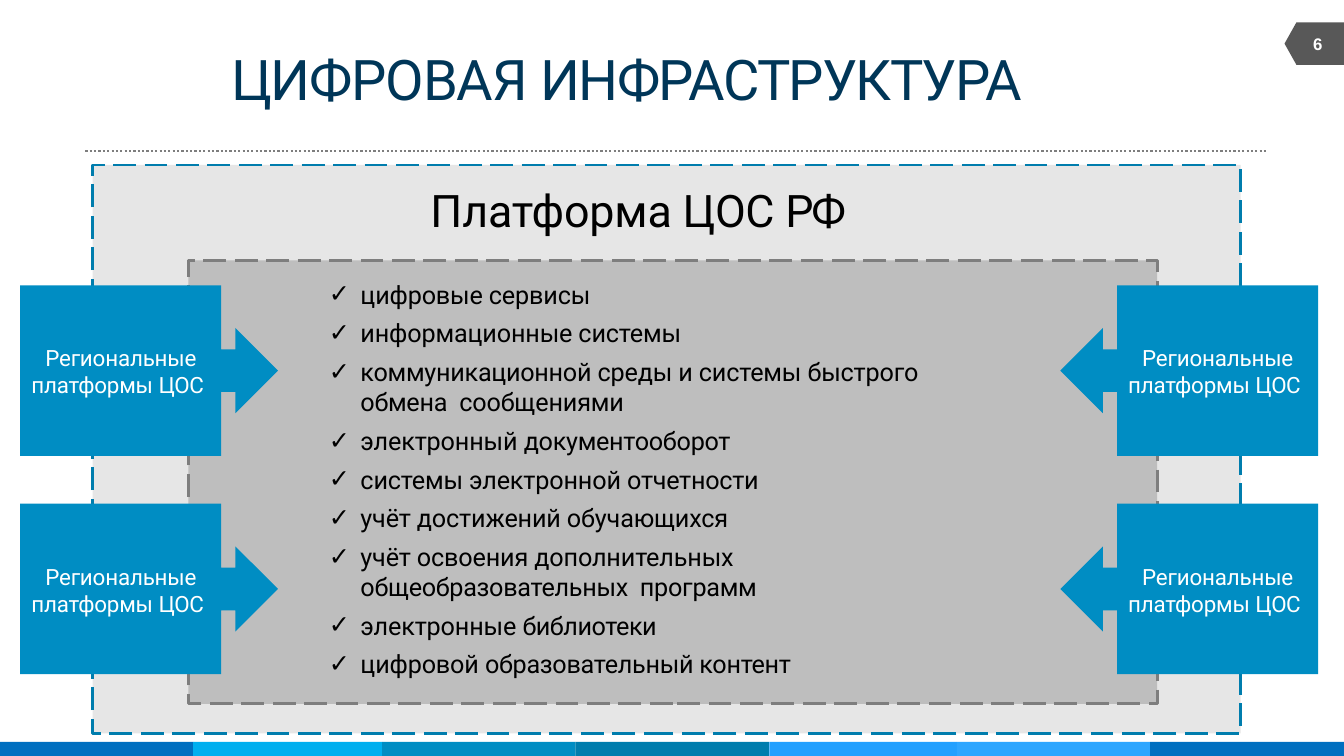
"""Build the slide about digital infrastructure and its regional platforms."""
from lxml.etree import SubElement
from pptx import Presentation
from pptx.dml.color import RGBColor
from pptx.enum.dml import MSO_LINE
from pptx.enum.shapes import MSO_CONNECTOR, MSO_SHAPE
from pptx.enum.text import MSO_ANCHOR, MSO_AUTO_SIZE, PP_ALIGN
from pptx.oxml.ns import qn
from pptx.util import Pt

WHITE = RGBColor(0xFF, 0xFF, 0xFF)
BLACK = RGBColor(0x00, 0x00, 0x00)
NAVY = RGBColor(0x00, 0x36, 0x58)
BLUE = RGBColor(0x00, 0x6F, 0xC0)
CYAN = RGBColor(0x00, 0xAF, 0xEF)
OCEAN = RGBColor(0x00, 0x8D, 0xC3)
TEAL = RGBColor(0x00, 0x7D, 0xAD)
SKY = RGBColor(0x22, 0xA0, 0xFF)
LIGHT_SKY = RGBColor(0x2E, 0xA6, 0xFF)
CHARCOAL = RGBColor(0x58, 0x58, 0x58)
GRAY = RGBColor(0x7E, 0x7E, 0x7E)
SILVER = RGBColor(0xBE, 0xBE, 0xBE)
PALE = RGBColor(0xE6, 0xE6, 0xE6)

deck = Presentation()
deck.slide_width, deck.slide_height = Pt(960), Pt(540)
page = deck.slides.add_slide(deck.slide_layouts[1])
title, services = page.placeholders


def add_block(kind, left, top, width, height, color):
    block = page.shapes.add_shape(kind, Pt(left), Pt(top), Pt(width), Pt(height))
    block.shadow.inherit = False
    block.fill.solid()
    block.fill.fore_color.rgb = color
    block.line.fill.background()
    return block


def write_text(box, para, pieces, size, color, before, top_inset=1, font="Roboto"):
    frame = box.text_frame
    frame.word_wrap = True
    frame.auto_size = MSO_AUTO_SIZE.NONE
    frame.vertical_anchor = MSO_ANCHOR.TOP
    frame.margin_left = frame.margin_right = frame.margin_bottom = 0
    frame.margin_top = Pt(top_inset)
    para.alignment = PP_ALIGN.LEFT
    para.space_before = Pt(before)
    for text, spacing in pieces:
        span = para.add_run()
        span.text = text
        span.font.name = font
        span.font.size = Pt(size)
        span.font.color.rgb = color
        span.font._element.set("spc", str(round(spacing * 100)))


stripe_edges = [0, 138, 273, 411, 549.5, 683.5, 821.5, 960]
stripe_colors = [BLUE, CYAN, OCEAN, TEAL, SKY, LIGHT_SKY, BLUE]
for left, right, color in zip(stripe_edges, stripe_edges[1:], stripe_colors):
    add_block(MSO_SHAPE.RECTANGLE, left, 530, right - left, 10, color)

badge = add_block(MSO_SHAPE.PENTAGON, 917.5, 16, 42.5, 30.3, CHARCOAL)
badge.rotation = 180
badge.adjustments[0] = 0.28
number = page.shapes.add_textbox(Pt(938), Pt(23), Pt(12), Pt(17))
number_para = number.text_frame.paragraphs[0]
write_text(number, number_para, [("6", -0.1)], 12, WHITE, 1, font="Arial")
number_para.runs[0].font.bold = True

title.left, title.top, title.width, title.height = Pt(165), Pt(30.5), Pt(604), Pt(50)
write_text(title, title.text_frame.paragraphs[0],
           [("ЦИФРОВАЯ ", -0.8), ("ИНФРАСТРУКТУРА", -1.2)], 40, NAVY, 0.9)

rule = page.shapes.add_connector(MSO_CONNECTOR.STRAIGHT, Pt(61), Pt(108), Pt(905.5), Pt(108))
rule.line.color.rgb = GRAY
rule.line.width = Pt(1.56)
rule.line.dash_style = MSO_LINE.ROUND_DOT
SubElement(rule.element.spPr, qn("a:effectLst"))

for left, top, width, height, fill, border in [
    (66.2, 117.8, 820, 406, PALE, TEAL),
    (134.6, 186, 692, 316.8, SILVER, GRAY),
]:
    panel = add_block(MSO_SHAPE.RECTANGLE, left, top, width, height, fill)
    panel.line.color.rgb = border
    panel.line.width = Pt(2.04)
    panel.line.dash_style = MSO_LINE.LONG_DASH

heading = page.shapes.add_textbox(Pt(307.5), Pt(129.6), Pt(311), Pt(40))
write_text(heading, heading.text_frame.paragraphs[0],
           [("Платформа", -0.1), (" ЦОС ", -0.3), ("РФ", -1.6)], 32, BLACK, 1.1)

for kind, left in [(MSO_SHAPE.RIGHT_ARROW_CALLOUT, 14.4), (MSO_SHAPE.LEFT_ARROW_CALLOUT, 757.4)]:
    for top in (203.8, 359.8):
        region = add_block(kind, left, top, 184.2, 121.8, OCEAN)
        for index, ratio in enumerate((0.25, 0.25, 0.25, 0.78)):
            region.adjustments[index] = ratio
        para = region.text_frame.paragraphs[0]
        write_text(region, para, [("Региональные платформы ", -0.1), ("ЦОС", -0.3)],
                   16, WHITE, 0.9)
        region.text_frame.vertical_anchor = MSO_ANCHOR.MIDDLE
        region.text_frame.margin_left = Pt(8)
        region.text_frame.margin_right = Pt(6)
        para._p.get_or_add_pPr().set("indent", str(Pt(10)))

service_items = [
    [("цифровые сервисы", -0.1)],
    [("информационные системы", -0.1)],
    [("коммуникационной ", -0.2), ("среды и системы быстрого ", -0.1),
     ("обмена  ", -0.2), ("сообщениями", -0.1)],
    [("электронный ", -0.1), ("документооборот", -0.2)],
    [("системы электронной ", -0.1), ("отчетности", -0.2)],
    [("учёт достижений обучающихся", -0.1)],
    [("учёт освоения дополнительных ", -0.1), ("общеобразовательных  программ", -0.2)],
    [("электронные ", -0.1), ("библиотеки", -0.3)],
    [("цифровой ", -0.1), ("образовательный контент", -0.2)],
]
services.left, services.top = Pt(233.5), Pt(192.3)
services.width, services.height = Pt(482), Pt(294)
page.shapes.element.append(services.element)
for index, pieces in enumerate(service_items):
    frame = services.text_frame
    para = frame.add_paragraph() if index else frame.paragraphs[0]
    write_text(services, para, pieces, 18, BLACK, 6 if index else 7, top_inset=7)
    properties = para._p.get_or_add_pPr()
    properties.set("marL", str(Pt(24)))
    properties.set("indent", str(Pt(-22.5)))
    SubElement(properties, qn("a:buChar")).set("char", "✓")

deck.save("out.pptx")
